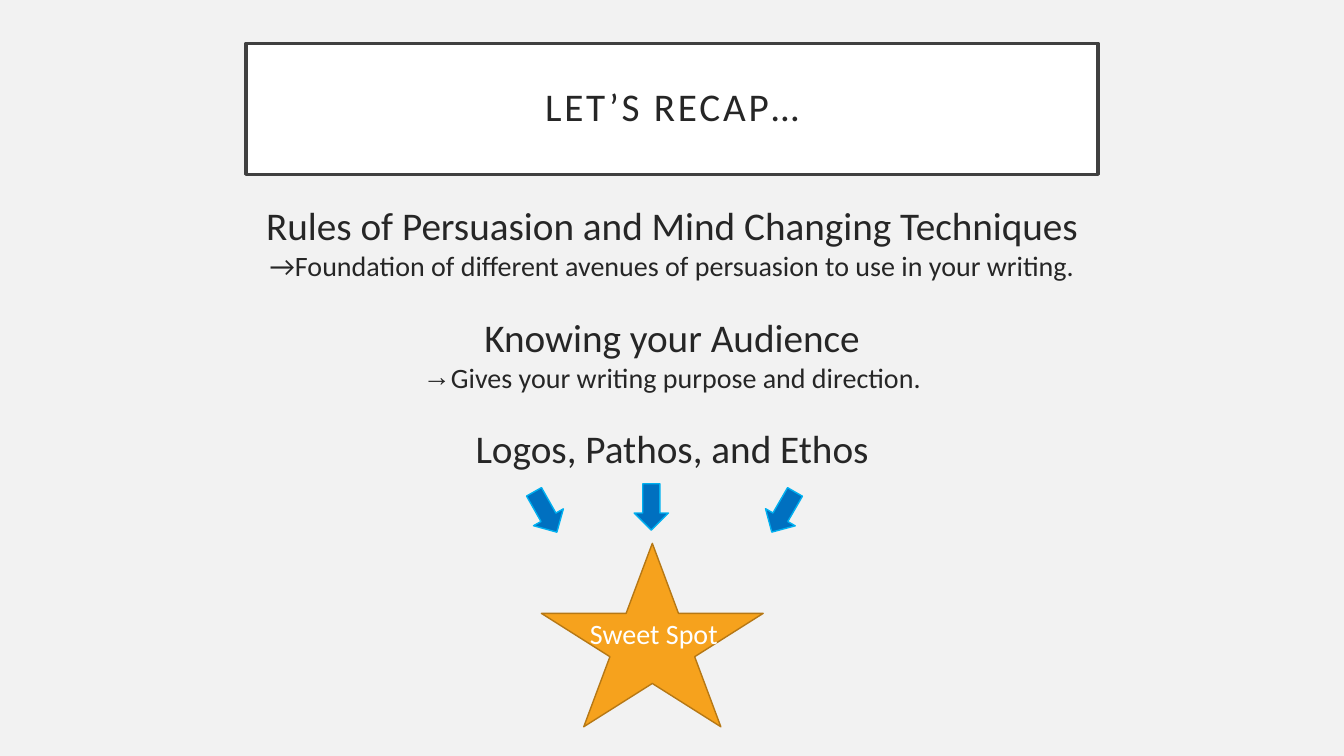
from dataclasses import dataclass

from lxml import etree
from pptx import Presentation
from pptx.dml.color import RGBColor
from pptx.enum.shapes import MSO_SHAPE as Preset
from pptx.enum.text import MSO_ANCHOR as Anchor, PP_ALIGN as Align
from pptx.oxml.ns import qn
from pptx.util import Inches, Pt

BACKGROUND = RGBColor(0xF2, 0xF2, 0xF2)
WHITE = RGBColor(0xFF, 0xFF, 0xFF)
INK = RGBColor(0x26, 0x26, 0x26)
FRAME = RGBColor(0x40, 0x40, 0x40)
ORANGE = RGBColor(0xF6, 0xA2, 0x1D)
BROWN = RGBColor(0xB6, 0x78, 0x15)
BLUE = RGBColor(0x00, 0x70, 0xC0)
SKY = RGBColor(0x00, 0xB0, 0xF0)


@dataclass
class Area:
    left: float
    top: float
    width: float
    height: float

    def lengths(self) -> list:
        return [Inches(n) for n in (self.left, self.top, self.width, self.height)]


@dataclass
class Line:
    text: str
    size: int
    gap: int = 0
    bullet: str = ""


@dataclass
class Arrow:
    left: float
    top: float
    rotation: float


LINES = [
    Line("Rules of Persuasion and Mind Changing Techniques", 28),
    Line("→Foundation of different avenues of persuasion to use in your writing.", 20),
    Line("Knowing your Audience", 28, gap=22),
    Line("Gives your writing purpose and direction.", 20, bullet="→"),
    Line("Logos, Pathos, and Ethos", 28, gap=22),
]
ARROWS = [Arrow(6.29, 4.8, 0), Arrow(7.6, 4.85, 30), Arrow(5.24, 4.85, 330.5)]


def add_preset(page, preset, area: Area, fill: RGBColor, line: RGBColor, weight: float = 1):
    shape = page.shapes.add_shape(preset, *area.lengths())
    shape.shadow.inherit = False
    shape.fill.solid()
    shape.fill.fore_color.rgb = fill
    shape.line.color.rgb = line
    shape.line.width = Pt(weight)
    return shape


def write(para, text: str, size: int, color: RGBColor):
    para.text = text
    para.alignment = Align.CENTER
    span = para.runs[0]
    span.font.name = "Calibri"
    span.font.size = Pt(size)
    span.font.color.rgb = color
    return span


def add_bullet(para, mark: str) -> None:
    props = para._p.get_or_add_pPr()
    props.set("marL", str(Inches(0.25)))
    props.set("indent", str(-Inches(0.25)))
    etree.SubElement(props, qn("a:buFont")).set("typeface", "Arial")
    etree.SubElement(props, qn("a:buChar")).set("char", mark)


def add_text_box(page, area: Area):
    box = page.shapes.add_textbox(*area.lengths())
    box.text_frame.word_wrap = True
    return box.text_frame


def main() -> None:
    deck = Presentation()
    deck.slide_width, deck.slide_height = Inches(13.33), Inches(7.5)
    page = deck.slides.add_slide(deck.slide_layouts[6])
    page.background.fill.solid()
    page.background.fill.fore_color.rgb = BACKGROUND

    # Title
    title = add_preset(page, Preset.RECTANGLE, Area(2.44, 0.43, 8.45, 1.3), WHITE, FRAME, 2.5)
    title.text_frame.vertical_anchor = Anchor.MIDDLE
    para = title.text_frame.paragraphs[0]
    span = write(para, "LET’S RECAP…", 28, INK)
    span.font._element.set("spc", "200")
    para.line_spacing = 0.9

    # Recap points
    frame = add_text_box(page, Area(2.44, 1.95, 8.45, 4.12))
    for index, line in enumerate(LINES):
        para = frame.add_paragraph() if index else frame.paragraphs[0]
        write(para, line.text, line.size, INK)
        para.space_before = Pt(line.gap)
        if line.bullet:
            add_bullet(para, line.bullet)

    # Star with its label
    add_preset(page, Preset.STAR_5_POINT, Area(5.37, 5.39, 2.2, 1.82), ORANGE, BROWN)
    label = add_text_box(page, Area(5, 6.07, 2.97, 0.44))
    write(label.paragraphs[0], "Sweet Spot", 20, WHITE)

    # Arrows towards the star
    for arrow in ARROWS:
        area = Area(arrow.left, arrow.top, 0.34, 0.46)
        shape = add_preset(page, Preset.DOWN_ARROW, area, BLUE, SKY)
        shape.rotation = arrow.rotation

    deck.save("out.pptx")


if __name__ == "__main__":
    main()
